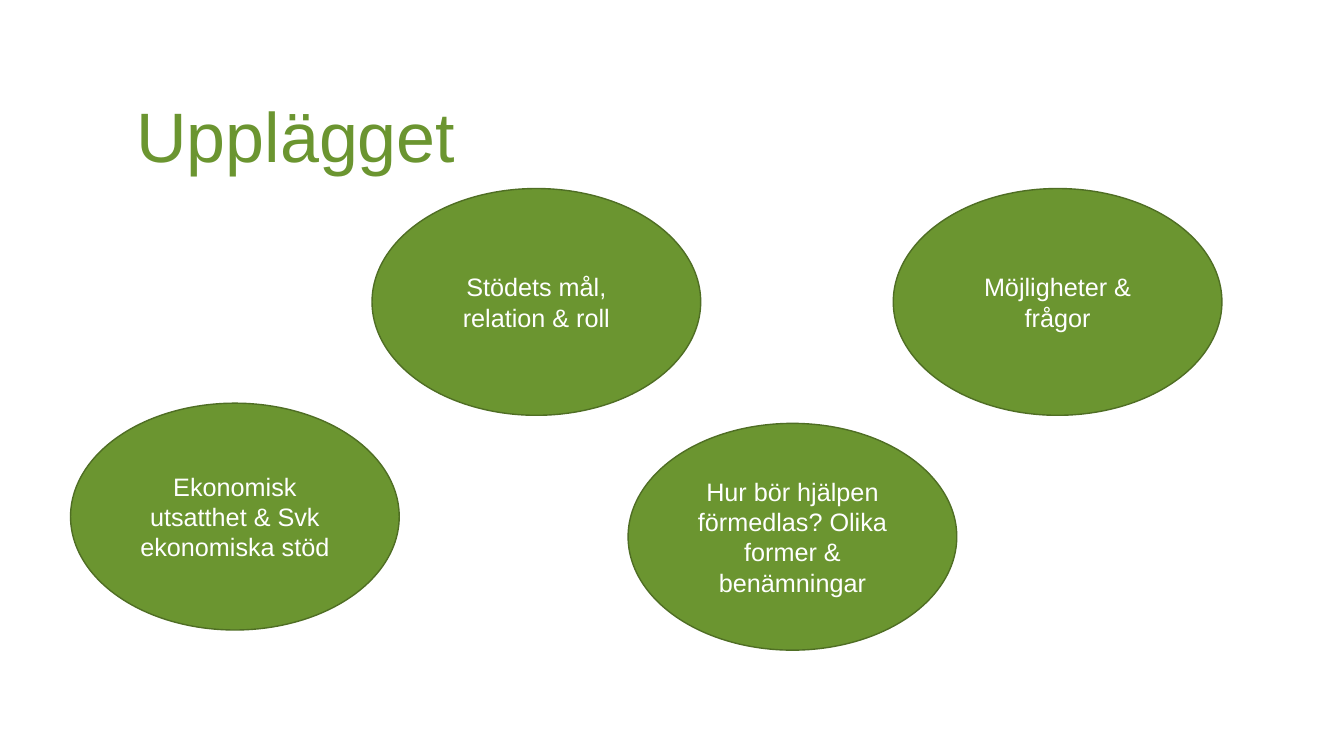
"""Build the Upplägget slide with its four topic ovals."""
from pptx import Presentation
from pptx.dml.color import RGBColor
from pptx.enum import shapes, text
from pptx.util import Inches, Pt

TITLE = "Upplägget"
TOPICS = [
    ("Ekonomisk utsatthet & Svk ekonomiska stöd", 0.7, 4),
    ("Hur bör hjälpen förmedlas? Olika former & benämningar", 6.23, 4.2),
    ("Stödets mål, relation & roll", 3.69, 1.87),
    ("Möjligheter & frågor", 8.86, 1.87),
]
OVAL = (3.26, 2.25)
GREEN = RGBColor(0x6B, 0x95, 0x30)
DARK = RGBColor(0x4F, 0x6E, 0x24)
WHITE = RGBColor(0xFF, 0xFF, 0xFF)


def write(shape, words, size, color, align, anchor):
    frame = shape.text_frame
    frame.text = words
    para = frame.paragraphs[0]
    para.alignment = align
    for name, value in {"word_wrap": True, "vertical_anchor": anchor,
                        "auto_size": text.MSO_AUTO_SIZE.NONE}.items():
        setattr(frame, name, value)
    for name, value in {"name": "Arial", "size": Pt(size)}.items():
        setattr(para.font, name, value)
    para.font.color.rgb = color


def main():
    deck = Presentation()
    deck.slide_width, deck.slide_height = Inches(13.33), Inches(7.5)
    slide = deck.slides.add_slide(deck.slide_layouts[5])

    title = slide.shapes.title
    place = {"left": 1.27, "top": 0.61, "width": 11.15, "height": 1.19}
    for name, value in place.items():
        setattr(title, name, Inches(value))
    write(title, TITLE, 50, GREEN, text.PP_ALIGN.LEFT, text.MSO_ANCHOR.BOTTOM)
    title.text_frame.margin_left = Inches(0.08)

    for words, left, top in TOPICS:
        box = [Inches(n) for n in (left, top, *OVAL)]
        oval = slide.shapes.add_shape(shapes.MSO_SHAPE.OVAL, *box)
        oval.shadow.inherit = False
        oval.fill.solid()
        oval.fill.fore_color.rgb = GREEN
        oval.line.color.rgb = DARK
        oval.line.width = Pt(1)
        write(oval, words, 18, WHITE, text.PP_ALIGN.CENTER, text.MSO_ANCHOR.MIDDLE)

    deck.save("out.pptx")


if __name__ == "__main__":
    main()
